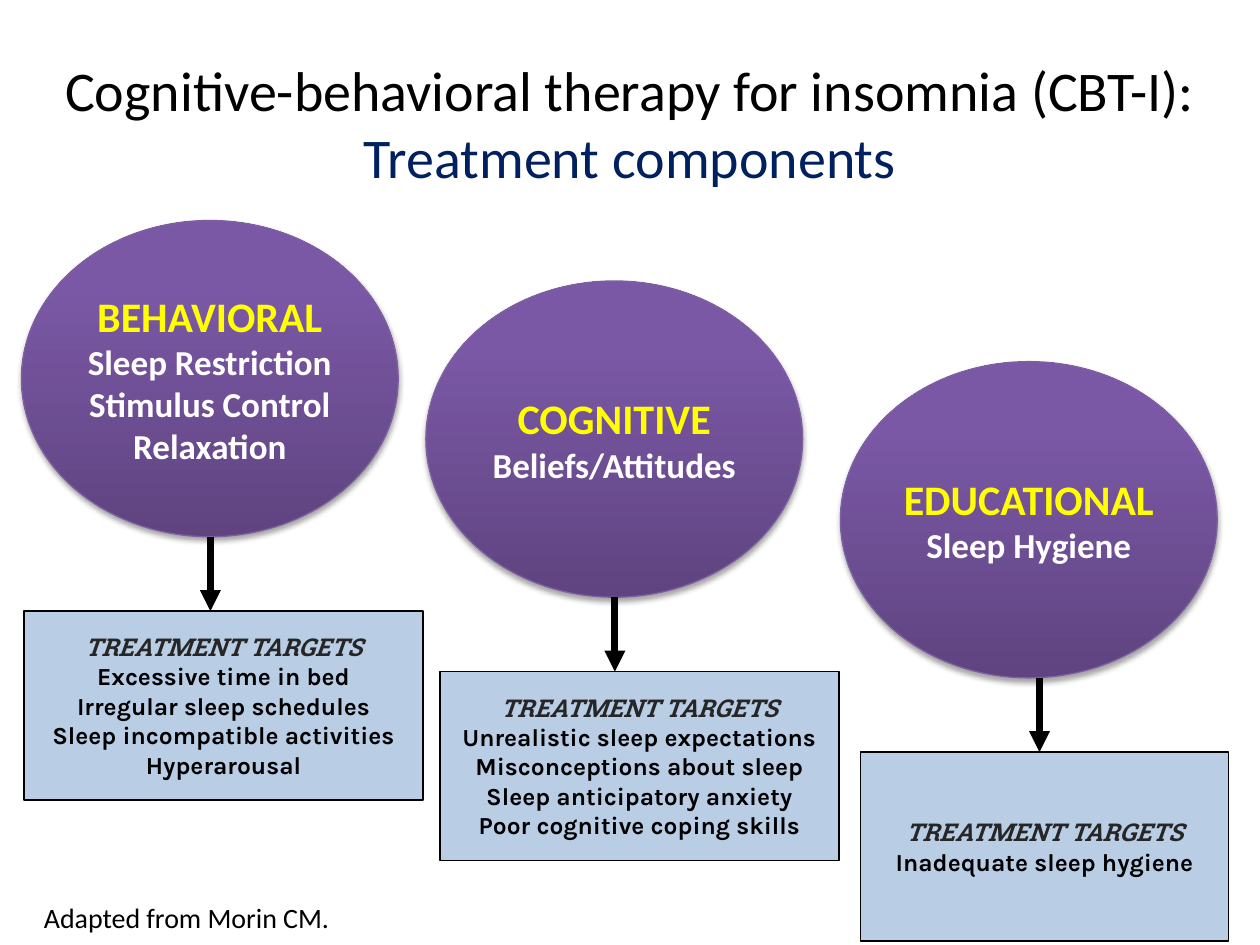
from dataclasses import dataclass

from lxml.etree import SubElement
from pptx import Presentation
from pptx.dml.color import RGBColor
from pptx.enum.shapes import MSO_CONNECTOR, MSO_SHAPE
from pptx.enum.text import MSO_ANCHOR, PP_ALIGN
from pptx.oxml.ns import qn
from pptx.util import Inches, Pt

BLACK = RGBColor(0x00, 0x00, 0x00)
WHITE = RGBColor(0xFF, 0xFF, 0xFF)
YELLOW = RGBColor(0xFF, 0xFF, 0x00)
NAVY = RGBColor(0x00, 0x20, 0x60)
CHARCOAL = RGBColor(0x26, 0x26, 0x26)
PALE_BLUE = RGBColor(0xB9, 0xCD, 0xE5)
PURPLE_EDGE = RGBColor(0x7D, 0x60, 0xA0)
PURPLE_STOPS = {
    0: RGBColor(0x5F, 0x44, 0x80),
    80: RGBColor(0x7B, 0x58, 0xA6),
    100: RGBColor(0x7C, 0x57, 0xA8),
}

ELLIPSE_SIZE = (2.99, 2.51)
ARROW_LENGTH = 0.59
TARGET_HEIGHT = 1.5

TITLE_FONT = {"name": "Calibri", "size": Pt(32), "color": BLACK}
SUBTITLE_FONT = TITLE_FONT | {"color": NAVY}
SOURCE_FONT = {"name": "Calibri", "size": Pt(16), "color": BLACK}
HEADING_FONT = {"name": "Calibri", "size": Pt(24), "bold": True, "color": YELLOW}
METHOD_FONT = HEADING_FONT | {"size": Pt(20), "color": WHITE}
TARGET_HEADING_FONT = {"name": "Roboto Slab", "size": Pt(14), "bold": True,
                       "italic": True, "color": CHARCOAL}
TARGET_FONT = TARGET_HEADING_FONT | {"name": "Karla", "italic": False, "color": BLACK}


@dataclass
class Component:
    heading: str
    methods: list[str]
    targets: list[str]
    left: float
    top: float
    arrow_x: float
    target_left: float
    target_width: float = 3.17


COMPONENTS = [
    Component("COGNITIVE", ["Beliefs/Attitudes"],
              ["Unrealistic sleep expectations", "Misconceptions about sleep",
               "Sleep anticipatory anxiety", "Poor cognitive coping skills"],
              3.38, 2.23, 4.88, 3.49),
    Component("EDUCATIONAL", ["Sleep Hygiene"], ["Inadequate sleep hygiene"],
              6.67, 2.87, 8.25, 6.83, 2.92),
    Component("BEHAVIORAL", ["Sleep Restriction", "Stimulus Control", "Relaxation"],
              ["Excessive time in bed", "Irregular sleep schedules",
               "Sleep incompatible activities", "Hyperarousal"],
              0.17, 1.75, 1.67, 0.19),
]


def add_run(paragraph, text: str, font_values: dict) -> None:
    run = paragraph.add_run()
    run.text = text
    for name, value in font_values.items():
        if name == "color":
            run.font.color.rgb = value
        else:
            setattr(run.font, name, value)


def write_list(shape, heading: str, heading_font: dict,
               items: list[str], item_font: dict) -> None:
    """Centre a heading and its items, one paragraph each, in a shape."""
    frame = shape.text_frame
    frame.word_wrap = False
    frame.vertical_anchor = MSO_ANCHOR.MIDDLE
    lines = [(heading, heading_font)] + [(item, item_font) for item in items]
    for index, (text, font_values) in enumerate(lines):
        paragraph = frame.add_paragraph() if index else frame.paragraphs[0]
        paragraph.alignment = PP_ALIGN.CENTER
        add_run(paragraph, text, font_values)


def fill_purple_gradient(shape) -> None:
    shape.fill.gradient()
    shape.fill.gradient_angle = 90
    stop_list = shape._element.spPr.find(".//" + qn("a:gsLst"))
    for stop in list(stop_list):
        stop_list.remove(stop)
    for percent, color in PURPLE_STOPS.items():
        stop = SubElement(stop_list, qn("a:gs"), pos=str(percent * 1000))
        SubElement(stop, qn("a:srgbClr"), val=str(color))


def add_soft_shadow(shape) -> None:
    shape.shadow.inherit = False
    effects = shape._element.spPr.find(qn("a:effectLst"))
    shadow = SubElement(effects, qn("a:outerShdw"), blurRad=str(Pt(3.1)),
                        dist=str(Pt(1.8)), dir="5400000", rotWithShape="0")
    color = SubElement(shadow, qn("a:srgbClr"), val=str(BLACK))
    SubElement(color, qn("a:alpha"), val="35000")


def add_ellipse(slide, component: Component) -> None:
    ellipse = slide.shapes.add_shape(
        MSO_SHAPE.OVAL, Inches(component.left), Inches(component.top),
        *map(Inches, ELLIPSE_SIZE))
    fill_purple_gradient(ellipse)
    ellipse.line.color.rgb = PURPLE_EDGE
    ellipse.line.width = Pt(0.75)
    add_soft_shadow(ellipse)
    for side in ("left", "top", "right", "bottom"):
        setattr(ellipse.text_frame, f"margin_{side}", 0)
    write_list(ellipse, component.heading, HEADING_FONT, component.methods, METHOD_FONT)


def add_arrow(slide, x: float, top: float, bottom: float) -> None:
    arrow = slide.shapes.add_connector(
        MSO_CONNECTOR.STRAIGHT, Inches(x), Inches(top), Inches(x), Inches(bottom))
    arrow.line.color.rgb = BLACK
    arrow.line.width = Pt(4)
    SubElement(arrow.line._get_or_add_ln(), qn("a:tailEnd"), type="triangle")
    SubElement(arrow._element.spPr, qn("a:effectLst"))


def add_target_box(slide, component: Component, top: float) -> None:
    box = slide.shapes.add_shape(
        MSO_SHAPE.RECTANGLE, Inches(component.target_left), Inches(top),
        Inches(component.target_width), Inches(TARGET_HEIGHT))
    box.shadow.inherit = False
    box.fill.solid()
    box.fill.fore_color.rgb = PALE_BLUE
    box.line.color.rgb = BLACK
    box.line.width = Pt(1)
    write_list(box, "TREATMENT TARGETS", TARGET_HEADING_FONT,
               component.targets, TARGET_FONT)


def add_component(slide, component: Component) -> None:
    arrow_top = component.top + ELLIPSE_SIZE[1]
    target_top = arrow_top + ARROW_LENGTH
    add_ellipse(slide, component)
    add_arrow(slide, component.arrow_x, arrow_top, target_top)
    add_target_box(slide, component, target_top)


def set_title(slide) -> None:
    title = slide.shapes.title
    title.left, title.top = Inches(0), Inches(0.19)
    title.width, title.height = Inches(10), Inches(1.56)
    title.text_frame.vertical_anchor = MSO_ANCHOR.MIDDLE
    paragraph = title.text_frame.paragraphs[0]
    paragraph.alignment = PP_ALIGN.CENTER
    add_run(paragraph, "Cognitive-behavioral therapy for insomnia (CBT-I): ", TITLE_FONT)
    add_run(paragraph, "Treatment components", SUBTITLE_FONT)


def add_source(slide) -> None:
    box = slide.shapes.add_textbox(Inches(0.25), Inches(7.1), Inches(8.35), Inches(0.37))
    box.text_frame.word_wrap = True
    add_run(box.text_frame.paragraphs[0], "Adapted from Morin CM.", SOURCE_FONT)


def main() -> None:
    presentation = Presentation()
    presentation.slide_width = Inches(10)
    presentation.slide_height = Inches(7.5)
    slide = presentation.slides.add_slide(presentation.slide_layouts[5])
    for component in COMPONENTS:
        add_component(slide, component)
    set_title(slide)
    add_source(slide)
    presentation.save("out.pptx")


if __name__ == "__main__":
    main()
